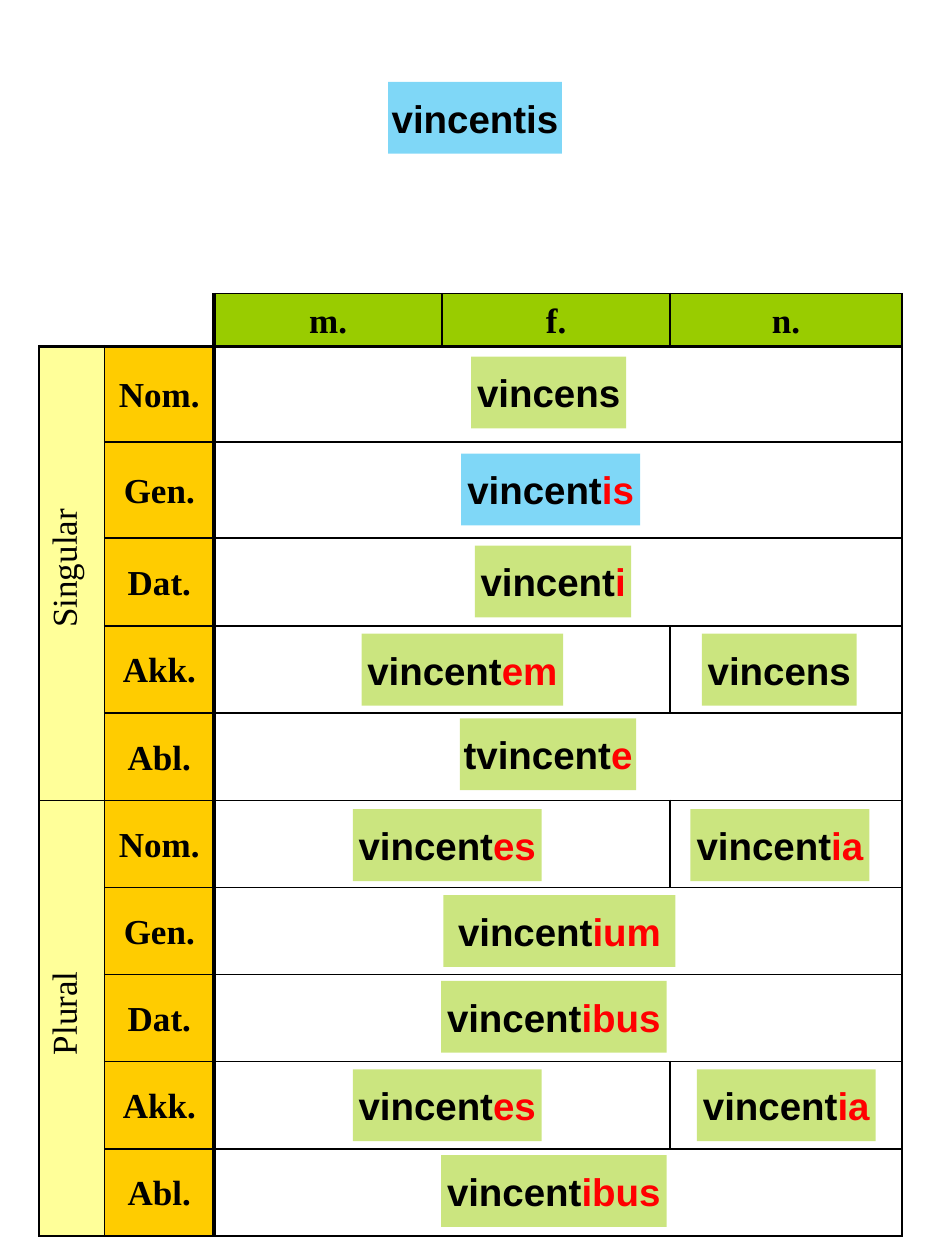
from dataclasses import dataclass

from lxml import etree
from pptx import Presentation
from pptx import util as u
from pptx.dml.color import RGBColor
from pptx.enum import shapes, text
from pptx.oxml import ns


@dataclass(frozen=True)
class Theme:
    ink: str = "000000"
    ending: str = "FF0000"
    gender: str = "99CC00"
    number: str = "FFFF99"
    case: str = "FFCC00"
    genitive: str = "00B0F0"
    table_font: str = "Times New Roman"
    word_font: str = "Arial"
    table_size: int = 20
    word_size: int = 22
    thin: float = 1
    thick: float = 2.25


THEME = Theme()
LEFT, TOP = 0.31, 2.33
COLUMNS = [0.52, 0.87, 1.81, 1.81, 1.84]
TALL_ROWS = [0.42, 0.76, 0.76, 0.7]
ROWS = TALL_ROWS + [(7.48 - sum(TALL_ROWS)) / 7] * 7
GENDERS = ["m.", "f.", "n."]
NUMBERS = ["Singular", "Plural"]
CASES = ["Nom.", "Gen.", "Dat.", "Akk.", "Abl."]
SPLIT_ROWS = {4, 6, 9}  # the neuter has a form of its own
WORD_HEIGHT = 0.57

# table row, distance below the row's top, left, width, stem, ending
FORMS = [
    (1, 0.08, 3.74, 1.23, "vincens", ""),
    (2, 0.09, 3.66, 1.42, "vincent", "is"),
    (3, 0.06, 3.77, 1.24, "vincent", "i"),
    (4, 0.06, 2.87, 1.6, "vincent", "em"),
    (4, 0.06, 5.57, 1.23, "vincens", ""),
    (5, 0.04, 3.65, 1.4, "tvincent", "e"),
    (6, 0.07, 2.8, 1.5, "vincent", "es"),
    (6, 0.07, 5.48, 1.42, "vincent", "ia"),
    (7, 0.06, 3.52, 1.84, "vincent", "ium"),
    (8, 0.05, 3.5, 1.79, "vincent", "ibus"),
    (9, 0.06, 2.8, 1.5, "vincent", "es"),
    (9, 0.06, 5.53, 1.42, "vincent", "ia"),
    (10, 0.05, 3.5, 1.79, "vincent", "ibus"),
]


def colour(value):
    return RGBColor.from_string(value)


def style_font(font, name, size, bold=True):
    font.name, font.size, font.bold = name, u.Pt(size), bold
    font.color.rgb = colour(THEME.ink)


def draw_border(cell, side, width):
    line = etree.SubElement(cell._tc.get_or_add_tcPr(), ns.qn("a:ln" + side),
                            w=str(u.Pt(width)))
    if width:
        fill = etree.SubElement(line, ns.qn("a:solidFill"))
        etree.SubElement(fill, ns.qn("a:srgbClr"), val=THEME.ink)
    else:
        etree.SubElement(line, ns.qn("a:noFill"))


def border_width(row, column, side):
    """Heavy rules run left of the forms and below the header."""
    on_corner = row == 0 and column < 2
    if on_corner and side in "LT":
        return 0
    edge_column = column + (side == "R")
    edge_row = row + (side == "B")
    if side in "LR" and edge_column == 2 or side in "TB" and edge_row == 1:
        return THEME.thick
    return THEME.thin


def add_block(table, row, column, rows=1, columns=1, fill=None):
    """Merge a range of cells, outline and fill it; return its first cell."""
    last_row, last_column = row + rows - 1, column + columns - 1
    first = table.cell(row, column)
    if rows * columns > 1:
        first.merge(table.cell(last_row, last_column))
    for r in range(row, last_row + 1):
        for c in range(column, last_column + 1):
            cell = table.cell(r, c)
            is_first = (r, c) == (row, column)
            outer = {"L": c == column, "R": c == last_column,
                     "T": r == row, "B": r == last_row}
            for side, is_outer in outer.items():
                if is_outer or is_first:
                    at_row = last_row if side == "B" else r
                    at_column = last_column if side == "R" else c
                    draw_border(cell, side, border_width(at_row, at_column, side))
            if fill:
                cell.fill.solid()
                cell.fill.fore_color.rgb = colour(fill)
            else:
                cell.fill.background()
    return first


def write_heading(cell, words, bold=True):
    cell.vertical_anchor = text.MSO_ANCHOR.MIDDLE
    cell.margin_left = cell.margin_right = u.Inches(0.06)
    cell.margin_top = cell.margin_bottom = u.Inches(0.03)
    para = cell.text_frame.paragraphs[0]
    para.text = words
    para.alignment = text.PP_ALIGN.CENTER
    para.line_spacing = 1.07
    style_font(para.font, THEME.table_font, THEME.table_size, bold)
    style_font(para.runs[0].font, THEME.table_font, THEME.table_size, bold)
    return para


def add_declension_table(page):
    frame = page.shapes.add_table(len(ROWS), len(COLUMNS), u.Inches(LEFT), u.Inches(TOP),
                                  u.Inches(sum(COLUMNS)), u.Inches(sum(ROWS)))
    table = frame.table
    table.first_row = table.horz_banding = False
    for column, width in zip(table.columns, COLUMNS):
        column.width = u.Inches(width)
    for row, height in zip(table.rows, ROWS):
        row.height = u.Inches(height)

    add_block(table, 0, 0, columns=2)
    for column, gender in enumerate(GENDERS, 2):
        write_heading(add_block(table, 0, column, fill=THEME.gender), gender)
    for index, number in enumerate(NUMBERS):
        cell = add_block(table, 1 + index * len(CASES), 0, rows=len(CASES), fill=THEME.number)
        para = write_heading(cell, number, bold=False)
        para._p.get_or_add_pPr().set("marL", str(u.Inches(0.08)))
        cell._tc.get_or_add_tcPr().set("vert", "vert270")
    for row, case in enumerate(CASES * len(NUMBERS), 1):
        write_heading(add_block(table, row, 1, fill=THEME.case), case)
        if row in SPLIT_ROWS:
            add_block(table, row, 2, columns=2)
            add_block(table, row, 4)
        else:
            add_block(table, row, 2, columns=3)


def add_word(page, left, top, width, stem, ending="", fill=THEME.gender):
    box = page.shapes.add_shape(shapes.MSO_SHAPE.RECTANGLE, u.Inches(left), u.Inches(top),
                                u.Inches(width), u.Inches(WORD_HEIGHT))
    box.shadow.inherit = False
    box.line.fill.background()
    box.fill.solid()
    box.fill.fore_color.rgb = colour(fill)
    tint = box.fill._xPr.find(ns.qn("a:solidFill"))[0]
    etree.SubElement(tint, ns.qn("a:alpha"), val="50000")

    frame = box.text_frame
    frame.word_wrap = False
    frame.auto_size = text.MSO_AUTO_SIZE.SHAPE_TO_FIT_TEXT
    frame.margin_left = frame.margin_right = u.Inches(0.02)
    frame.margin_top = frame.margin_bottom = u.Inches(0.1)
    para = frame.paragraphs[0]
    para.alignment = text.PP_ALIGN.CENTER
    for words, ink in ((stem, THEME.ink), (ending, THEME.ending)):
        if words:
            span = para.add_run()
            span.text = words
            style_font(span.font, THEME.word_font, THEME.word_size)
            span.font.color.rgb = colour(ink)


def main():
    deck = Presentation()
    deck.slide_width, deck.slide_height = u.Inches(7.5), u.Inches(10)
    page = deck.slides.add_slide(deck.slide_layouts[6])
    add_word(page, 3.08, 0.65, 1.38, "vincentis", fill=THEME.genitive)
    add_declension_table(page)
    for row, drop, left, width, stem, ending in FORMS:
        fill = THEME.genitive if ending == "is" else THEME.gender
        add_word(page, left, TOP + sum(ROWS[:row]) + drop, width, stem, ending, fill)
    deck.save("out.pptx")


if __name__ == "__main__":
    main()
